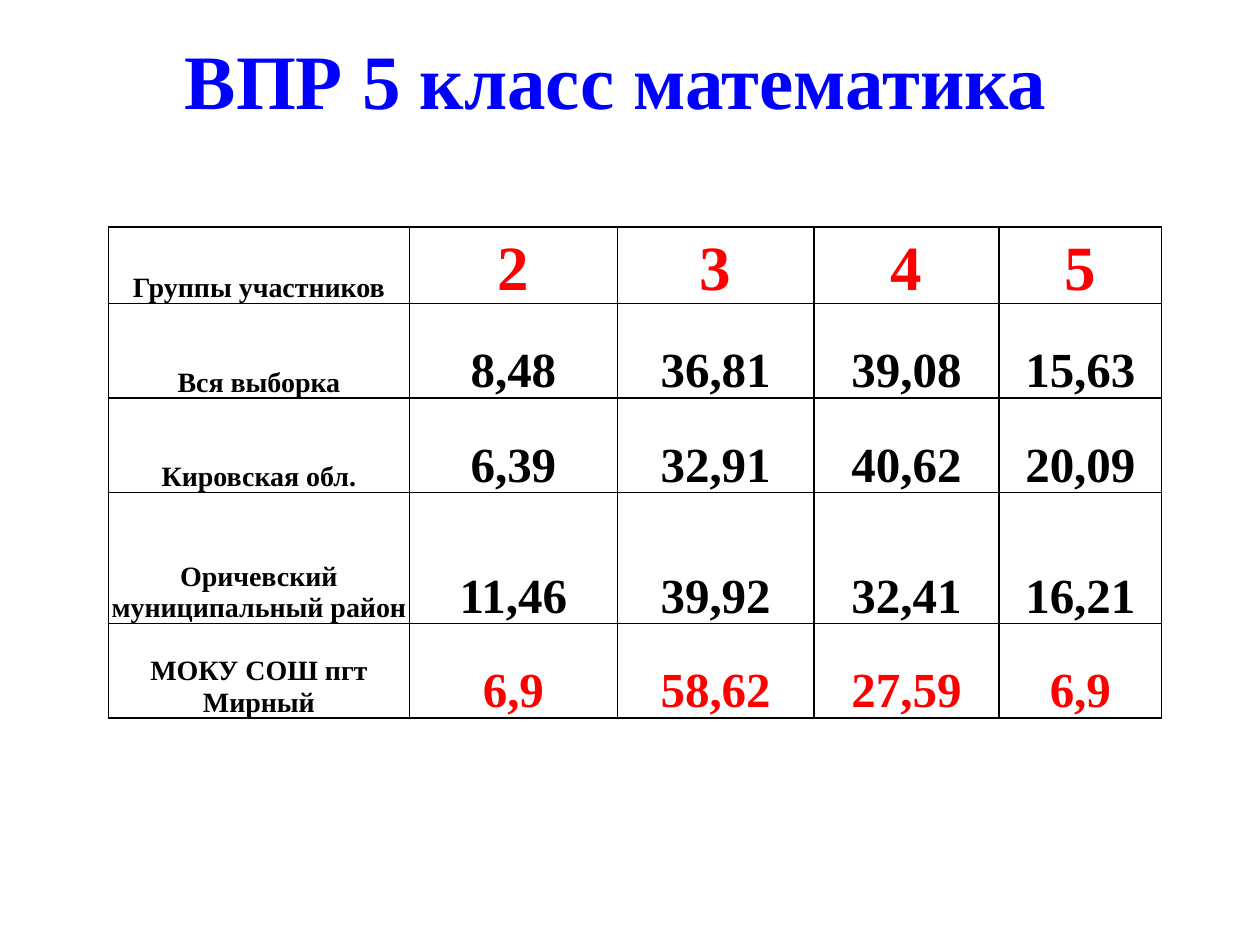
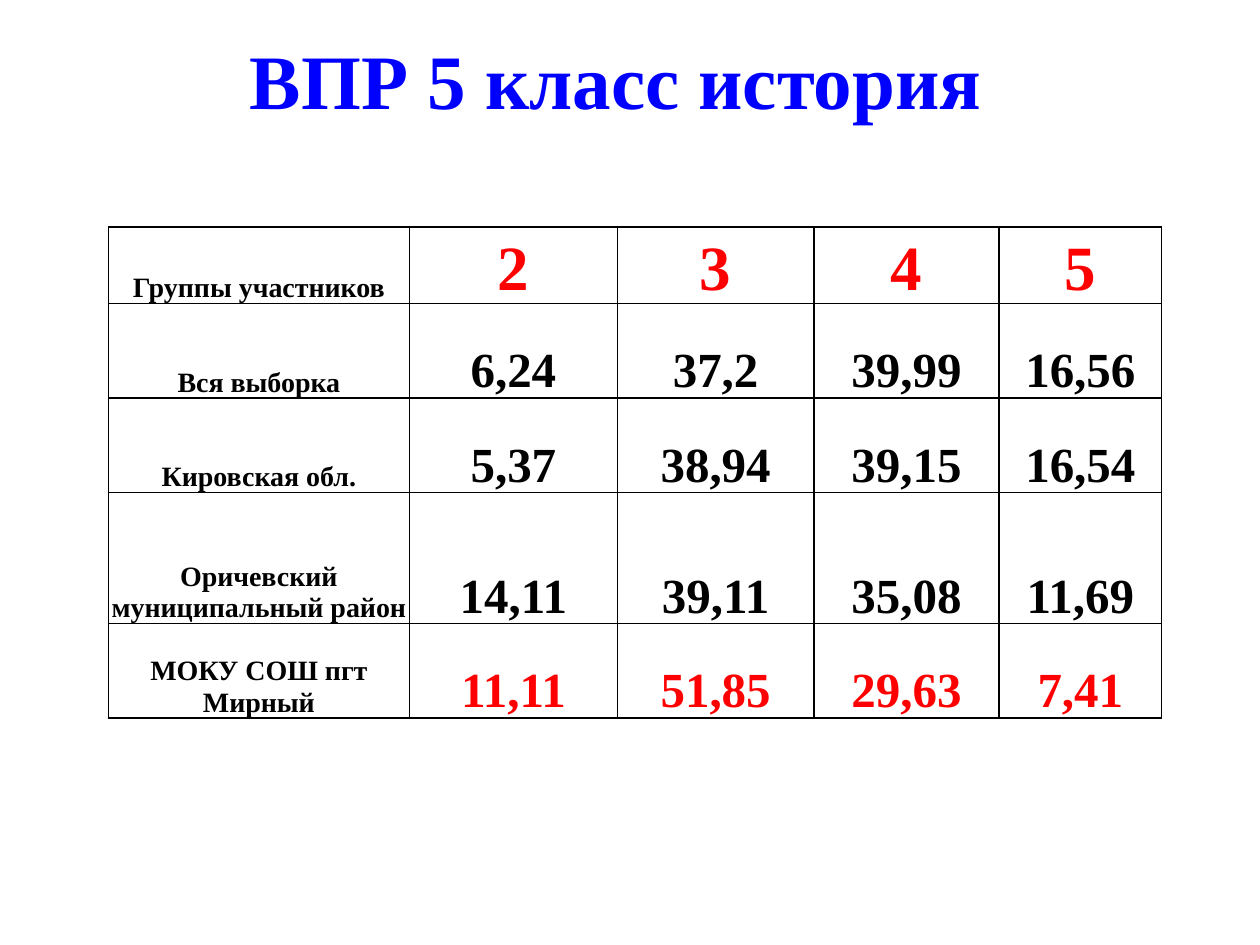
"""Build two slides with fifth-grade test results by group of participants."""
import dataclasses

import lxml.etree
import pptx
import pptx.dml.color
import pptx.enum.text
import pptx.oxml.ns
import pptx.util

Inches = pptx.util.Inches
RGBColor = pptx.dml.color.RGBColor


@dataclasses.dataclass(frozen=True)
class Theme:
    font: str = "Times New Roman"
    title_color: str = "0000FF"
    text_color: str = "000000"
    accent_color: str = "FF0000"
    border_color: str = "000000"
    border_points: int = 1
    title_size: int = 44
    grade_size: int = 36
    value_size: int = 28
    group_size: int = 16


theme = Theme()
grades = ["2", "3", "4", "5"]
groups = [
    "Вся выборка",
    "Кировская обл.",
    "Оричевский муниципальный район",
    "МОКУ СОШ пгт Мирный",
]
column_widths = [2.39, 1.65, 1.56, 1.47, 1.29]
row_heights = [0.59, 0.75, 0.75, 1.04, 0.75]
results = {
    "ВПР 5 класс математика": [
        ["8,48", "36,81", "39,08", "15,63"],
        ["6,39", "32,91", "40,62", "20,09"],
        ["11,46", "39,92", "32,41", "16,21"],
        ["6,9", "58,62", "27,59", "6,9"],
    ],
    "ВПР 5 класс история": [
        ["6,24", "37,2", "39,99", "16,56"],
        ["5,37", "38,94", "39,15", "16,54"],
        ["14,11", "39,11", "35,08", "11,69"],
        ["11,11", "51,85", "29,63", "7,41"],
    ],
}


def write_text(text_frame, text, size, color):
    text_frame.text = text
    text_frame.word_wrap = True
    paragraph = text_frame.paragraphs[0]
    paragraph.alignment = pptx.enum.text.PP_ALIGN.CENTER
    font = paragraph.runs[0].font
    font.name = theme.font
    font.size = pptx.util.Pt(size)
    font.bold = True
    font.color.rgb = RGBColor.from_string(color)


def draw_borders(cell):
    properties = cell._tc.get_or_add_tcPr()
    qn = pptx.oxml.ns.qn
    for position, side in enumerate(["a:lnL", "a:lnR", "a:lnT", "a:lnB"]):
        line = lxml.etree.Element(qn(side), w=str(pptx.util.Pt(theme.border_points)))
        fill = lxml.etree.SubElement(line, qn("a:solidFill"))
        lxml.etree.SubElement(fill, qn("a:srgbClr"), val=theme.border_color)
        properties.insert(position, line)


presentation = pptx.Presentation()
presentation.slide_width = Inches(10)
presentation.slide_height = Inches(7.5)

for title, values in results.items():
    slide = presentation.slides.add_slide(presentation.slide_layouts[6])
    title_box = slide.shapes.add_textbox(Inches(0.39), Inches(0), Inches(9), Inches(1.25))
    title_box.text_frame.vertical_anchor = pptx.enum.text.MSO_ANCHOR.MIDDLE
    write_text(title_box.text_frame, title, theme.title_size, theme.title_color)

    rows = [["Группы участников", *grades]]
    rows += [[group, *shares] for group, shares in zip(groups, values)]
    table = slide.shapes.add_table(
        len(rows), len(column_widths), Inches(0.86), Inches(1.8),
        Inches(sum(column_widths)), Inches(sum(row_heights)),
    ).table
    table.first_row = False
    table.horz_banding = False
    for column, width in zip(table.columns, column_widths):
        column.width = Inches(width)

    for row_index, row in enumerate(rows):
        table.rows[row_index].height = Inches(row_heights[row_index])
        for column_index, text in enumerate(row):
            size, color = theme.value_size, theme.text_color
            if column_index == 0:
                size = theme.group_size
            elif row_index == 0:
                size, color = theme.grade_size, theme.accent_color
            elif row_index == len(rows) - 1:
                color = theme.accent_color
            cell = table.cell(row_index, column_index)
            cell.margin_left = cell.margin_right = cell.margin_top = Inches(0.01)
            cell.margin_bottom = Inches(0)
            cell.vertical_anchor = pptx.enum.text.MSO_ANCHOR.BOTTOM
            cell.fill.background()
            write_text(cell.text_frame, text, size, color)
            draw_borders(cell)

presentation.save("out.pptx")
